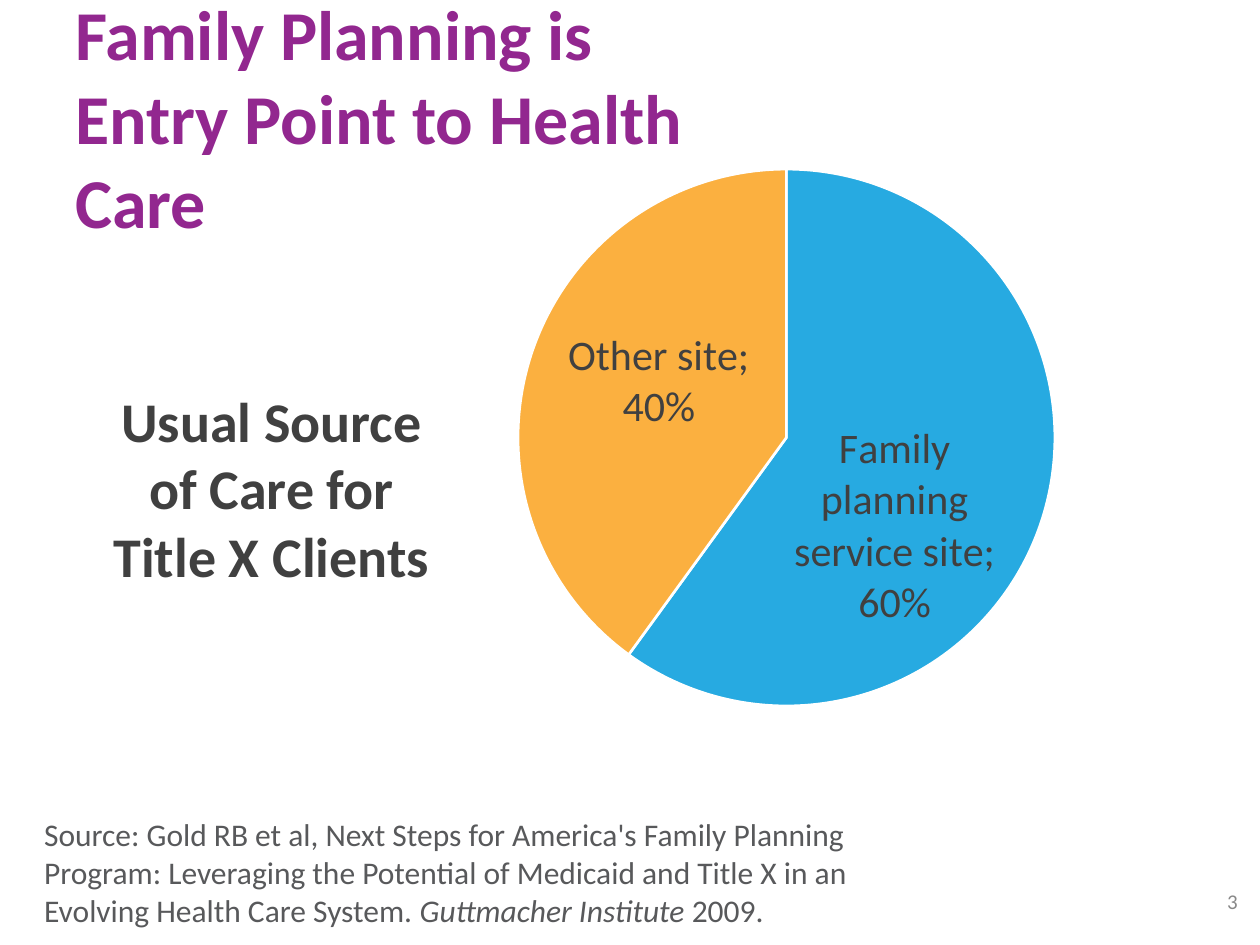
from pptx import Presentation
from pptx import util as u
from pptx.chart import data
from pptx.dml import color
from pptx.enum import chart as kinds, text
from pptx.oxml import parse_xml
from pptx.oxml import ns

FONT = "Calibri"
HUES = {
    "title": "92278F",
    "dark": "404040",
    "source": "58595B",
    "number": "898989",
    "blue": "27AAE1",
    "gold": "FBB040",
    "white": "FFFFFF",
}
ALIGN = text.PP_ALIGN
ANCHOR = text.MSO_ANCHOR


def hue(name):
    return color.RGBColor.from_string(HUES[name])


def style(font, size, name, bold=False):
    font.name = FONT
    font.size = u.Pt(size)
    font.color.rgb = hue(name)
    font.bold = bold


def add_text(slide, place, runs, size, name, bold=False,
             align=ALIGN.LEFT, anchor=ANCHOR.TOP):
    box = slide.shapes.add_textbox(*[u.Cm(n) for n in place])
    frame = box.text_frame
    frame.word_wrap = True
    frame.vertical_anchor = anchor
    para = frame.paragraphs[0]
    para.alignment = align
    for words, slant in runs:
        run = para.add_run()
        run.text = words
        style(run.font, size, name, bold)
        run.font.italic = slant


def make(tag, inner="", attrs=""):
    return parse_xml(f"<c:{tag} {ns.nsdecls('c')} {attrs}>{inner}</c:{tag}>")


def layout(parent, index, **parts):
    for old in parent.findall(ns.qn("c:layout")):
        parent.remove(old)
    inner = "".join(f'<c:{key} val="{val}"/>' for key, val in parts.items())
    parent.insert(index, make("layout", f"<c:manualLayout>{inner}</c:manualLayout>"))


def add_label(point, shift):
    label = point.data_label
    style(label.font, 24, "dark")
    label.position = kinds.XL_LABEL_POSITION.CENTER


def tune_label(node, shift):
    layout(node, 1, x=shift[0], y=shift[1])
    node.insert(2, make("numFmt", attrs='formatCode="0%" sourceLinked="0"'))
    node.find(ns.qn("c:showCatName")).set("val", "1")
    node.append(make("separator", "; "))


def add_pie(slide, place, slices):
    info = data.CategoryChartData(number_format="0%")
    info.categories = [part[0] for part in slices]
    info.add_series("Series 1", [part[1] for part in slices])
    chart = slide.shapes.add_chart(
        kinds.XL_CHART_TYPE.PIE, *[u.Cm(n) for n in place], info).chart
    chart.has_legend = False
    chart.has_title = False
    chart.font.name = FONT
    chart.font.size = u.Pt(24)
    area = chart.element.find(".//" + ns.qn("c:plotArea"))
    layout(area, 0, layoutTarget="inner", xMode="edge", yMode="edge",
           x=0.24, y=0.03, w=0.55, h=0.79)
    series = chart.plots[0].series[0]
    for i, (_, _, name, shift) in enumerate(slices):
        point = series.points[i]
        point.format.fill.solid()
        point.format.fill.fore_color.rgb = hue(name)
        point.format.line.color.rgb = hue("white")
        point.format.line.width = u.Pt(1.5)
        add_label(point, shift)
    nodes = area.findall(".//" + ns.qn("c:dLbl"))
    for node, part in zip(nodes, slices):
        tune_label(node, part[3])


def main():
    deck = Presentation()
    deck.slide_width = u.Cm(25.4)
    deck.slide_height = u.Cm(19.05)
    slide = deck.slides.add_slide(deck.slide_layouts[6])
    add_text(slide, (1.27, 0.76, 13.77, 3.18),
             [("Family Planning is Entry Point to Health Care", False)],
             40, "title", True, anchor=ANCHOR.MIDDLE)
    add_text(slide, (1.88, 7.67, 7.19, 4.37),
             [("Usual Source of Care for Title X Clients", False)],
             32, "dark", True, ALIGN.CENTER)
    add_pie(slide, (5.72, 2.97, 19.68, 13.77), [
        ("Family planning service site", 0.6, "blue", (-0.02, 0.07)),
        ("Other site", 0.4, "gold", (0, -0.02)),
    ])
    add_text(slide, (0.64, 16.31, 16.94, 3.33), [
        ("Source: Gold RB et al, Next Steps for America's Family Planning "
         "Program: Leveraging the Potential of Medicaid and Title X in an "
         "Evolving Health Care System. ", False),
        ("Guttmacher Institute", True),
        (" 2009.", False),
    ], 18, "source")
    add_text(slide, (23.93, 17.65, 1.27, 1.02), [("3", False)],
             12, "number", align=ALIGN.RIGHT, anchor=ANCHOR.MIDDLE)
    deck.save("out.pptx")


if __name__ == "__main__":
    main()
